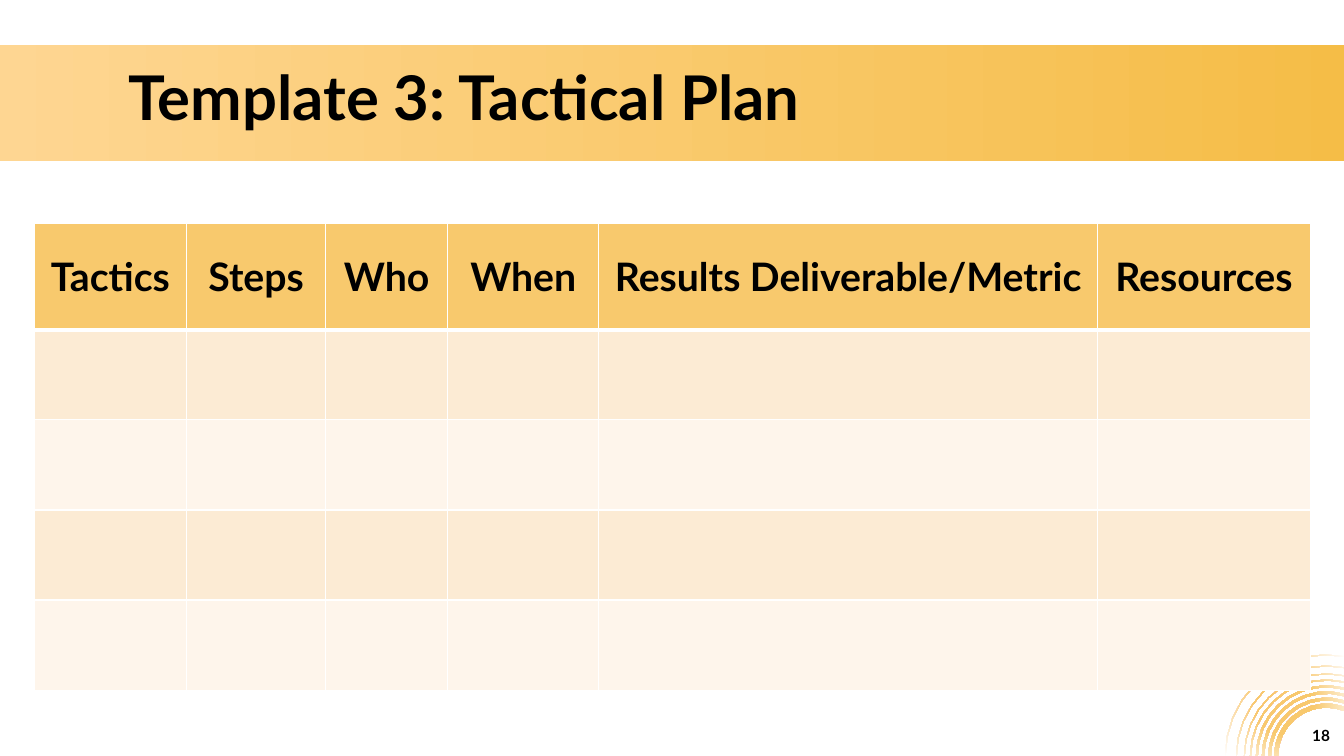
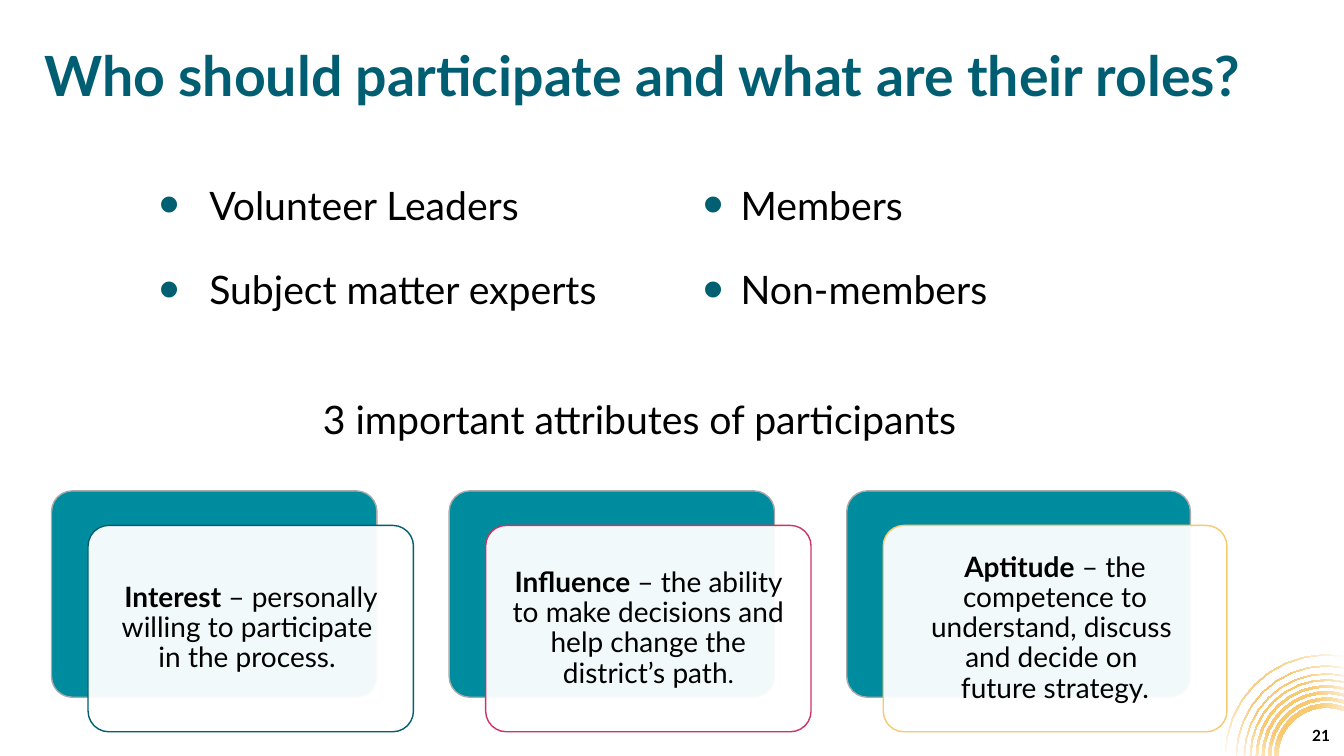
import math

import lxml.etree
import pptx
import pptx.dml.color
import pptx.enum.shapes
import pptx.enum.text
import pptx.oxml.ns
import pptx.util

Cm = pptx.util.Cm
Pt = pptx.util.Pt
qn = pptx.oxml.ns.qn
SubElement = lxml.etree.SubElement
ALIGN = pptx.enum.text.PP_ALIGN
MIDDLE = pptx.enum.text.MSO_ANCHOR.MIDDLE
SHAPE = pptx.enum.shapes.MSO_SHAPE

# Shared look
FONT = "Lato"
BLACK, WHITE = "000000", "FFFFFF"
GOLD, TEAL, DARK_TEAL = "F8C96D", "008C9F", "005E72"


def rgb(hex_text):
    return pptx.dml.color.RGBColor.from_string(hex_text)


def add_run(paragraph, text, size, bold=False, color=BLACK):
    run = paragraph.add_run()
    run.text = text
    run.font.name = FONT
    run.font.size = Pt(size)
    run.font.bold = bold
    run.font.color.rgb = rgb(color)


deck = pptx.Presentation()
deck.slide_width, deck.slide_height = Cm(33.87), Cm(19.05)
plan = deck.slides.add_slide(deck.slide_layouts[5])
roles = deck.slides.add_slide(deck.slide_layouts[1])

# Corner rings, built once and moved to the master
center_x, center_y, edge = 33.43, 19.05, 33.87
ring_radii = [(1.22, 1.32), (1.4, 1.47), (1.57, 1.63), (1.73, 1.78),
              (1.9, 1.93), (2.06, 2.08), (2.26, 2.28), (2.54, 2.56)]
arc_steps = 9
outline = None
for inner, outer in ring_radii:
    points = []
    for radius, order in ((outer, 1), (inner, -1)):
        end = math.acos((edge - center_x) / radius)
        angles = [math.pi + (end - math.pi) * i / arc_steps for i in range(arc_steps + 1)]
        points += [(Cm(center_x + radius * math.cos(a)), Cm(center_y - radius * math.sin(a)))
                   for a in angles[::order]]
    if outline is None:
        outline = plan.shapes.build_freeform(*points[0], scale=1.0)
    else:
        outline.move_to(*points[0])
    outline.add_line_segments(points[1:], close=True)
rings = outline.convert_to_shape()

# Title band
band = plan.shapes.add_shape(SHAPE.RECTANGLE, 0, Cm(1.14), Cm(33.96), Cm(2.92))

for shape, stops in ((rings, [(0.37, GOLD), (1, WHITE)]),
                     (band, [(0, "FED692"), (1, "F5BD47")])):
    shape.shadow.inherit = False
    shape.line.fill.background()
    shape.fill.gradient()
    for stop, (position, color) in zip(shape.fill.gradient_stops, stops):
        stop.position = position
        stop.color.rgb = rgb(color)
band.fill.gradient_angle = 0
plan.shapes.element.insert(2, band.element)

linear = rings.element.spPr.find(".//" + qn("a:lin"))
gradient = linear.getparent()
gradient.remove(linear)
circle = SubElement(gradient, qn("a:path"), path="circle")
SubElement(circle, qn("a:fillToRect"), l="50000", t="50000", r="50000", b="50000")
rings.element.nvSpPr.cNvPr.set("id", "20")
deck.slide_master.shapes.element.insert(2, rings.element)

# Titles and page numbers
for slide, heading, size, color, left, top, width, number in (
        (plan, "Template 3: Tactical Plan", 44, BLACK, 2.98, 1.55, 32.16, "18"),
        (roles, "Who should participate and what are their roles?", 39.6, DARK_TEAL,
         0.86, 1, 32.16, "21")):
    title = slide.shapes.title
    title.left, title.top, title.width, title.height = Cm(left), Cm(top), Cm(width), Cm(1.96)
    title.text_frame.auto_size = pptx.enum.text.MSO_AUTO_SIZE.NONE
    title.text_frame.vertical_anchor = MIDDLE
    line = title.text_frame.paragraphs[0]
    line.alignment = ALIGN.LEFT
    line.line_spacing = 0.9
    add_run(line, heading, size, True, color)

    page = slide.shapes.add_textbox(Cm(26.15), Cm(18.22), Cm(7.62), Cm(0.61)).text_frame
    page.word_wrap = True
    page.vertical_anchor = MIDDLE
    page.paragraphs[0].alignment = ALIGN.RIGHT
    add_run(page.paragraphs[0], number, 11, True)

# Tactical plan table
headers = ["Tactics", "Steps", "Who", "When", "Results Deliverable/Metric", "Resources"]
column_widths = [3.84, 3.51, 3.07, 3.81, 12.57, 5.36]
row_heights = [2.69] + [2.27] * 4
tactics = plan.shapes.add_table(
    len(row_heights), len(headers), Cm(0.86), Cm(5.62),
    Cm(sum(column_widths)), Cm(sum(row_heights))).table
for column, width in zip(tactics.columns, column_widths):
    column.width = Cm(width)
for r, height in enumerate(row_heights):
    tactics.rows[r].height = Cm(height)
    for c, header in enumerate(headers):
        cell = tactics.cell(r, c)
        cell.fill.solid()
        cell.fill.fore_color.rgb = rgb(GOLD if r == 0 else ("FEF5EB", "FCEBD4")[r % 2])
        if r == 0:
            cell.vertical_anchor = MIDDLE
            cell.text_frame.paragraphs[0].alignment = ALIGN.CENTER
            add_run(cell.text_frame.paragraphs[0], header, 28, True)
        # White rules, heavier under the header
        properties = cell._tc.get_or_add_tcPr()
        for position, side in enumerate(("lnL", "lnR", "lnT", "lnB")):
            heavy = (r, side) in ((0, "lnB"), (1, "lnT"))
            rule = SubElement(properties, qn("a:" + side), w=str(Pt(3 if heavy else 1)))
            SubElement(SubElement(rule, qn("a:solidFill")), qn("a:srgbClr"), val=WHITE)
            properties.insert(position, rule)

# Participants in two columns
people = roles.placeholders[1]
people.left, people.top, people.width, people.height = Cm(3.75), Cm(3.84), Cm(27.61), Cm(4.22)
people.text_frame.auto_size = pptx.enum.text.MSO_AUTO_SIZE.NONE
people.text_frame._txBody.bodyPr.set("numCol", "2")
for i, (group, margin, indent) in enumerate((
        ("Volunteer Leaders", 1.27, -1.27), ("Subject matter experts", 1.27, -1.27),
        ("Members", 1.11, -0.95), ("Non-members", 1.11, -0.95))):
    item = people.text_frame.paragraphs[0] if i == 0 else people.text_frame.add_paragraph()
    item.line_spacing = 1.5
    item.space_before = Pt(10)
    add_run(item, group, 28)
    bullet = item._p.get_or_add_pPr()
    bullet.set("marL", str(Cm(margin)))
    bullet.set("indent", str(Cm(indent)))
    SubElement(SubElement(bullet, qn("a:buClr")), qn("a:srgbClr"), val="005F71")
    SubElement(bullet, qn("a:buSzPct"), val="150000")
    SubElement(bullet, qn("a:buFont"), typeface="Arial")
    SubElement(bullet, qn("a:buChar"), char="•")

# Lead-in to the attributes
lead_in = roles.shapes.add_textbox(Cm(0.86), Cm(9.96), Cm(30.51), Cm(3.18)).text_frame
lead_in.word_wrap = True
lead_in.paragraphs[0].alignment = ALIGN.CENTER
lead_in.paragraphs[0].line_spacing = 0.9
add_run(lead_in.paragraphs[0], "3 important attributes of participants", 28)

# Attribute cards: a teal panel, a translucent card in front, and its text
attributes = [
    ("Interest", [" – personally willing to participate ", "in the process. "], "",
     DARK_TEAL, 8.2),
    ("Influence", [" – the ability to make decisions and help change the district’s path"], ".",
     "CE3364", 8.2),
    ("Aptitude", [" – the competence to understand, discuss ", "and decide on ",
                  "future strategy."], "", GOLD, 8.66),
]
for i, (attribute, meaning, small_end, accent, width) in enumerate(attributes):
    left, top = 1.3 + 10.02 * i, 12.37
    for shift_x, shift_y, fill, border in ((0, 0, TEAL, "A8A9A8"), (0.92, 0.87, WHITE, accent)):
        card = roles.shapes.add_shape(SHAPE.ROUNDED_RECTANGLE, Cm(left + shift_x),
                                      Cm(top + shift_y), Cm(width), Cm(5.2))
        card.shadow.inherit = False
        card.adjustments[0] = 0.1
        card.fill.solid()
        card.fill.fore_color.rgb = rgb(fill)
        card.line.color.rgb = rgb(border)
        card.line.width = Pt(1)
    # The front card is the last one drawn
    SubElement(card.element.spPr.find(".//" + qn("a:srgbClr")), qn("a:alpha"), val="95000")
    frame = card.text_frame
    frame.word_wrap = True
    frame.vertical_anchor = MIDDLE
    frame.margin_left = frame.margin_right = frame.margin_top = frame.margin_bottom = Cm(0.2)
    text = frame.paragraphs[0]
    text.alignment = ALIGN.CENTER
    text.line_spacing = 0.9
    add_run(text, attribute, 20, True)
    for n, part in enumerate(meaning):
        if n:
            text.add_line_break()
        add_run(text, part, 20)
    if small_end:
        add_run(text, small_end, 18)

deck.save("out.pptx")
